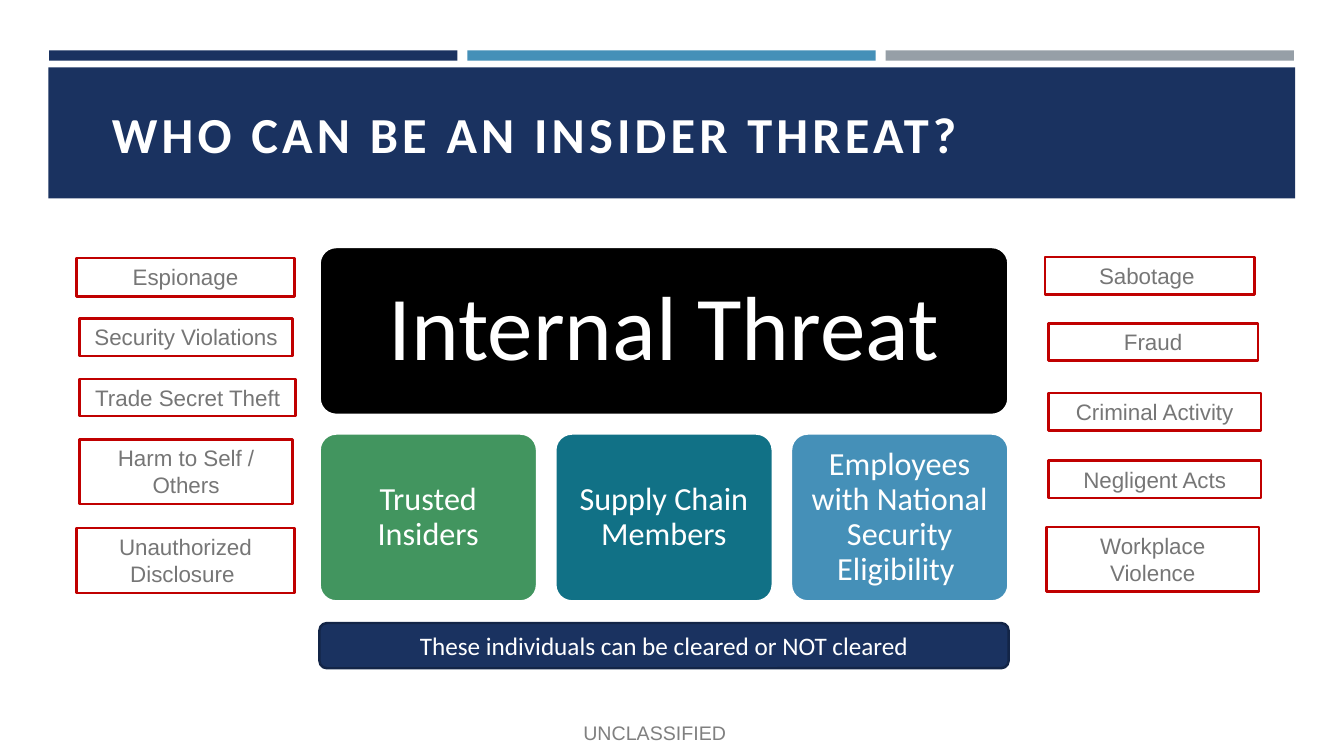
from pptx import Presentation, util as u
from pptx.dml.color import RGBColor
from pptx.enum import shapes, text

NAVY, BLUE, WHITE, RED = "1A3260", "4590B8", "FFFFFF", "C00000"
TITLE = "WHO CAN BE AN INSIDER THREAT?"
BARS = [NAVY, BLUE, "969FA7"]
ACTS = [
    ("Espionage", 1.93, 6.5, 5.49, 0.97),
    ("Security Violations", 2.01, 8.03, 5.36, 0.94),
    ("Trade Secret Theft", 2.01, 9.55, 5.44, 0.94),
    ("Harm to Self / Others", 2.01, 11.07, 5.36, 1.63),
    ("Unauthorized Disclosure ", 1.93, 13.31, 5.49, 1.63),
    ("Sabotage ", 26.34, 6.48, 5.28, 0.94),
    ("Fraud", 26.42, 8.15, 5.28, 0.94),
    ("Criminal Activity", 26.42, 9.91, 5.36, 0.94),
    ("Negligent Acts", 26.42, 11.61, 5.36, 0.94),
    ("Workplace Violence", 26.37, 13.28, 5.36, 1.63),
]
HEAD = "Internal Threat"
CARDS = [
    ("Trusted Insiders", "42955F"),
    ("Supply Chain Members", "117186"),
    ("Employees with National Security Eligibility ", BLUE),
]
NOTE = "These individuals can be cleared or NOT cleared"
MARK = "UNCLASSIFIED"

LEFT, WIDE, TALL = 8.05, 17.37, 4.24
CARD, GAP = 5.49, 0.45
RECT = shapes.MSO_SHAPE.RECTANGLE
ROUND = shapes.MSO_SHAPE.ROUNDED_RECTANGLE
MID, TOP = text.MSO_ANCHOR.MIDDLE, text.MSO_ANCHOR.TOP

deck = Presentation()
deck.slide_width, deck.slide_height = u.Cm(33.87), u.Cm(19.05)
page = deck.slides.add_slide(deck.slide_layouts[6])


def paint(part, color):
    part.rgb = RGBColor.from_string(color)


def place(box):
    return [u.Cm(n) for n in box]


def block(box, fill, edge=None, width=1.75, kind=RECT):
    shape = page.shapes.add_shape(kind, *place(box))
    shape.shadow.inherit = False
    shape.fill.solid()
    paint(shape.fill.fore_color, fill)
    if edge:
        shape.line.fill.solid()
        paint(shape.line.color, edge)
        shape.line.width = u.Pt(width)
    else:
        shape.line.fill.background()
    return shape


def write(shape, words, size, color=WHITE, face="Calibri", anchor=MID,
          align=text.PP_ALIGN.CENTER, wrap=True):
    frame = shape.text_frame
    frame.word_wrap, frame.vertical_anchor = wrap, anchor
    para = frame.paragraphs[0]
    para.alignment = align
    para.add_run().text = words
    para.font.size, para.font.name = u.Pt(size), face
    paint(para.font.color, color)
    return para


def label(box, words, size, **style):
    shape = page.shapes.add_textbox(*place(box))
    return write(shape, words, size, align=text.PP_ALIGN.LEFT, **style)


def card(box, words, fill, size, pad):
    shape = block(box, fill, WHITE, 2, ROUND)
    shape.adjustments[0] = 0.1
    frame = shape.text_frame
    frame.margin_left = frame.margin_right = u.Cm(pad)
    frame.margin_top = frame.margin_bottom = u.Cm(pad)
    write(shape, words, size).line_spacing = 0.9


for i, fill in enumerate(BARS):
    block((1.24 + i * 10.54, 1.27, 10.29, 0.26), fill)
block((1.22, 1.7, 31.42, 3.3), NAVY)
para = label((2.57, 1.98, 27, 2.74), TITLE, 36)
para.font.bold = True
para.runs[0].font._element.set("spc", "300")

for words, *box in ACTS:
    shape = block(box, WHITE, RED)
    write(shape, words, 16, "767676", "Arial", TOP)

card((LEFT, 6.22, WIDE, TALL), HEAD, "000000", 65, 0.69)
for i, (words, fill) in enumerate(CARDS):
    card((LEFT + i * (CARD + GAP), 10.92, CARD, TALL), words, fill, 23, 0.25)

shape = block((LEFT, 15.7, WIDE, 1.14), NAVY, "132547", kind=ROUND)
write(shape, NOTE, 18)
label((14.45, 18.03, 4.14, 0.86), MARK, 14, color="808080", face="Arial",
      anchor=TOP, wrap=False)

deck.save("out.pptx")
